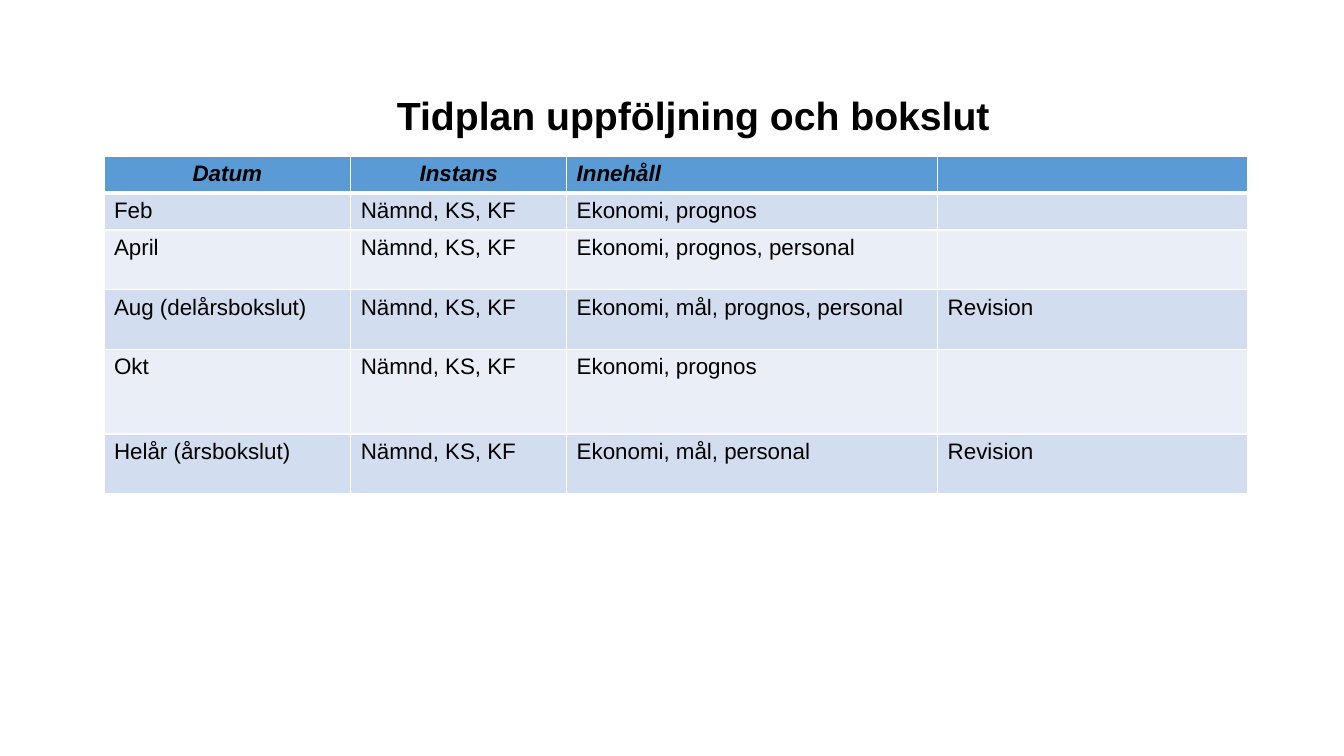
import pptx
import pptx.util
import pptx.dml.color
import pptx.enum.text
from lxml import etree

Cm, Pt = pptx.util.Cm, pptx.util.Pt
Color = pptx.dml.color.RGBColor.from_string
Align = pptx.enum.text.PP_ALIGN
Anchor = pptx.enum.text.MSO_ANCHOR

TITLE = "Tidplan uppföljning och bokslut"
HEAD = ("Datum", "Instans", "Innehåll", "")
BOARDS = "Nämnd, KS, KF"
PLAN = [
    ("Feb", "Ekonomi, prognos", ""),
    ("April", "Ekonomi, prognos, personal", ""),
    ("Aug (delårsbokslut)", "Ekonomi, mål, prognos, personal", "Revision"),
    ("Okt", "Ekonomi, prognos", ""),
    ("Helår (årsbokslut)", "Ekonomi, mål, personal", "Revision"),
]
WIDTHS = (6.22, 5.44, 9.35, 7.82)
HEIGHTS = (0.9, 0.92, 1.51, 1.51, 2.12, 1.51)
THEME = {
    "font": "Arial", "text": "000000", "line": "FFFFFF",
    "head": "5B9BD5", "bands": ("D2DEEF", "EAEFF7"),
    "title": 28, "body": 16, "thin": 1, "thick": 3,
}


def write(para, text, size, bold=False, italic=False):
    run = para.add_run()
    run.text = text
    font = run.font
    font.name, font.size = THEME["font"], Pt(size)
    font.bold, font.italic = bold, italic
    font.color.rgb = Color(THEME["text"])


def shrink(para):
    """Give an empty paragraph the body size, so that its row stays low."""
    end = etree.SubElement(para._p, pptx.oxml.ns.qn("a:endParaRPr"))
    end.set("sz", str(THEME["body"] * 100))


def border(cell, bottom):
    qn = pptx.oxml.ns.qn
    props = cell._tc.get_or_add_tcPr()
    for spot, side in enumerate("LRTB"):
        width = bottom if side == "B" else THEME["thin"]
        line = etree.Element(qn("a:ln" + side), w=str(Pt(width)))
        fill = etree.SubElement(line, qn("a:solidFill"))
        etree.SubElement(fill, qn("a:srgbClr"), val=THEME["line"])
        props.insert(spot, line)


def add_title(slide):
    box = slide.shapes.add_textbox(Cm(4.14), Cm(1.57), Cm(26.67), Cm(2.79))
    frame = box.text_frame
    frame.word_wrap = True
    frame.vertical_anchor = Anchor.MIDDLE
    para = frame.paragraphs[0]
    para.alignment = Align.CENTER
    para.line_spacing = 0.9
    write(para, TITLE, THEME["title"], bold=True)


def add_plan(slide):
    rows = [HEAD] + [(date, BOARDS, *rest) for date, *rest in PLAN]
    table = slide.shapes.add_table(
        len(rows), len(HEAD), Cm(2.62), Cm(3.93),
        Cm(sum(WIDTHS)), Cm(sum(HEIGHTS))).table
    for col, width in zip(table.columns, WIDTHS):
        col.width = Cm(width)
    for r, texts in enumerate(rows):
        table.rows[r].height = Cm(HEIGHTS[r])
        head = r == 0
        shade = THEME["head"] if head else THEME["bands"][(r - 1) % 2]
        for c, text in enumerate(texts):
            cell = table.cell(r, c)
            cell.fill.solid()
            cell.fill.fore_color.rgb = Color(shade)
            border(cell, THEME["thick" if head else "thin"])
            para = cell.text_frame.paragraphs[0]
            para.alignment = Align.CENTER if head and c < 2 else Align.LEFT
            if text:
                write(para, text, THEME["body"], head, head)
            else:
                shrink(para)


def main():
    deck = pptx.Presentation()
    deck.slide_width, deck.slide_height = Cm(33.87), Cm(19.05)
    slide = deck.slides.add_slide(deck.slide_layouts[6])
    add_title(slide)
    add_plan(slide)
    deck.save("out.pptx")


if __name__ == "__main__":
    main()
